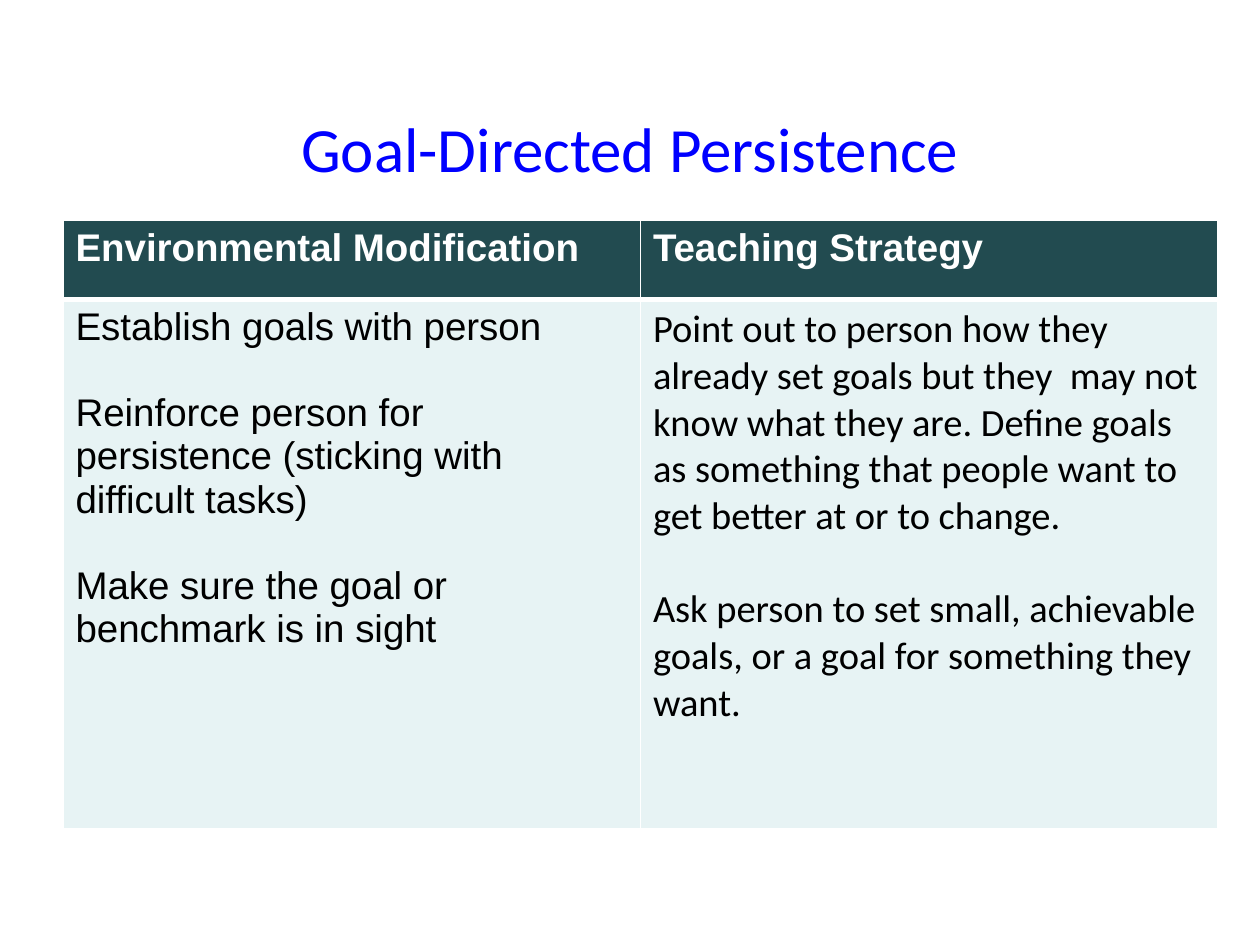
import dataclasses
import typing

import lxml.etree
import pptx
import pptx.dml.color
import pptx.enum.text
import pptx.oxml.ns
import pptx.util

Cm = pptx.util.Cm
Pt = pptx.util.Pt


@dataclasses.dataclass(frozen=True)
class Theme:
    title_color: str = "0000FF"
    header_fill: str = "224B50"
    header_color: str = "FFFFFF"
    body_fill: str = "E7F3F4"
    body_color: str = "000000"
    border_color: str = "FFFFFF"
    title_size: float = 36
    table_size: float = 22
    heading_font: str = "Arial"
    body_font: str = "Calibri"
    thin_border: float = 1
    thick_border: float = 3


@dataclasses.dataclass(frozen=True)
class Column:
    heading: str
    paragraphs: tuple[str, ...]
    font: str
    gap: float


THEME = Theme()
COLUMNS = (
    Column(
        "Environmental Modification",
        (
            "Establish goals with person",
            "Reinforce person for persistence (sticking with difficult tasks)",
            "Make sure the goal or benchmark is in sight",
        ),
        THEME.heading_font,
        24.6,
    ),
    Column(
        "Teaching Strategy",
        (
            "Point out to person how they already set goals but they  may not "
            "know what they are. Define goals as something that people want to "
            "get better at or to change.",
            "Ask person to set small, achievable goals, or a goal for something "
            "they want.",
        ),
        THEME.body_font,
        26.3,
    ),
)


def write_text(
    text_frame: typing.Any,
    *paragraphs: str,
    font: str,
    size: float,
    color: str,
    bold: bool = False,
    gap: float = 0,
    alignment: typing.Any = pptx.enum.text.PP_ALIGN.LEFT,
) -> None:
    """Write the paragraphs in one format, with gap points between them."""
    text_frame.word_wrap = True
    for index, text in enumerate(paragraphs):
        paragraph = text_frame.add_paragraph() if index else text_frame.paragraphs[0]
        paragraph.alignment = alignment
        paragraph.space_before = Pt(gap if index else 0)
        run = paragraph.add_run()
        run.text = text
        run.font.name = font
        run.font.size = Pt(size)
        run.font.bold = bold
        run.font.color.rgb = pptx.dml.color.RGBColor.from_string(color)


def style_cell(cell: typing.Any, fill: str, top: float, bottom: float) -> None:
    """Give the cell its borders (widths in points) and its fill."""
    qn = pptx.oxml.ns.qn
    properties = cell._tc.get_or_add_tcPr()
    widths = {"lnL": THEME.thin_border, "lnR": THEME.thin_border, "lnT": top, "lnB": bottom}
    for side, width in widths.items():
        line = lxml.etree.SubElement(properties, qn(f"a:{side}"), w=str(Pt(width)))
        solid_fill = lxml.etree.SubElement(line, qn("a:solidFill"))
        lxml.etree.SubElement(solid_fill, qn("a:srgbClr"), val=THEME.border_color)
    cell.fill.solid()
    cell.fill.fore_color.rgb = pptx.dml.color.RGBColor.from_string(fill)


def add_title(slide: typing.Any, text: str) -> None:
    shape = slide.shapes.add_textbox(Cm(1.9), Cm(1.7), Cm(21.6), Cm(2.54))
    shape.text_frame.vertical_anchor = pptx.enum.text.MSO_ANCHOR.MIDDLE
    write_text(
        shape.text_frame,
        text,
        font=THEME.body_font,
        size=THEME.title_size,
        color=THEME.title_color,
        alignment=pptx.enum.text.PP_ALIGN.CENTER,
    )


def add_strategy_table(slide: typing.Any, columns: tuple[Column, ...]) -> None:
    header_height, body_height = Cm(1.6), Cm(10.67)
    table = slide.shapes.add_table(
        2, len(columns), Cm(1.27), Cm(4.44), Cm(23.28), header_height + body_height
    ).table
    table.rows[0].height = header_height
    table.rows[1].height = body_height
    for index, column in enumerate(columns):
        header, body = table.cell(0, index), table.cell(1, index)
        style_cell(header, THEME.header_fill, THEME.thin_border, THEME.thick_border)
        style_cell(body, THEME.body_fill, THEME.thick_border, THEME.thin_border)
        write_text(
            header.text_frame,
            column.heading,
            font=THEME.heading_font,
            size=THEME.table_size,
            color=THEME.header_color,
            bold=True,
        )
        write_text(
            body.text_frame,
            *column.paragraphs,
            font=column.font,
            size=THEME.table_size,
            color=THEME.body_color,
            gap=column.gap,
        )


def main() -> None:
    presentation = pptx.Presentation()
    presentation.slide_width = Cm(25.4)
    presentation.slide_height = Cm(19.05)
    slide = presentation.slides.add_slide(presentation.slide_layouts[6])
    add_title(slide, "Goal-Directed Persistence")
    add_strategy_table(slide, COLUMNS)
    presentation.save("out.pptx")


if __name__ == "__main__":
    main()
